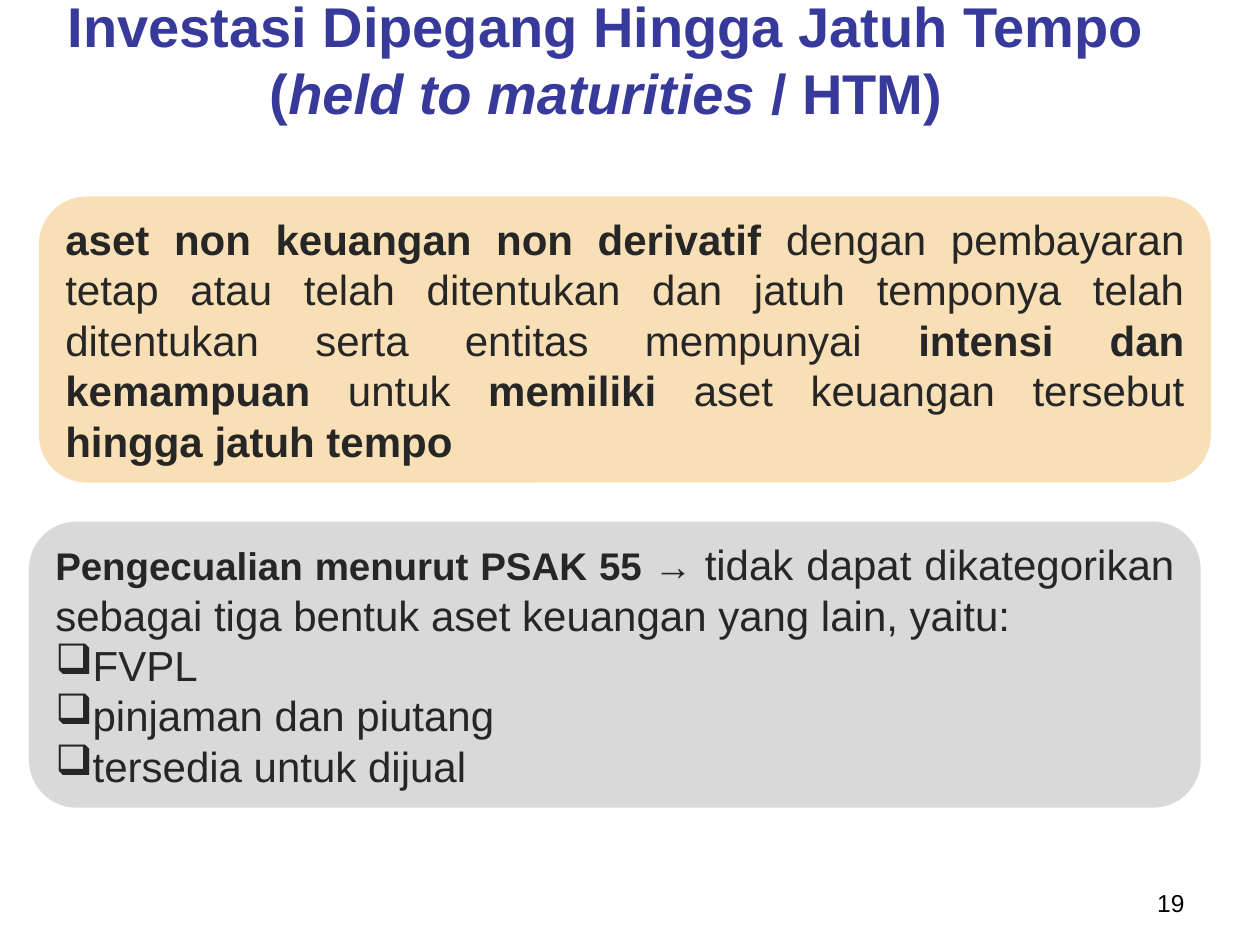
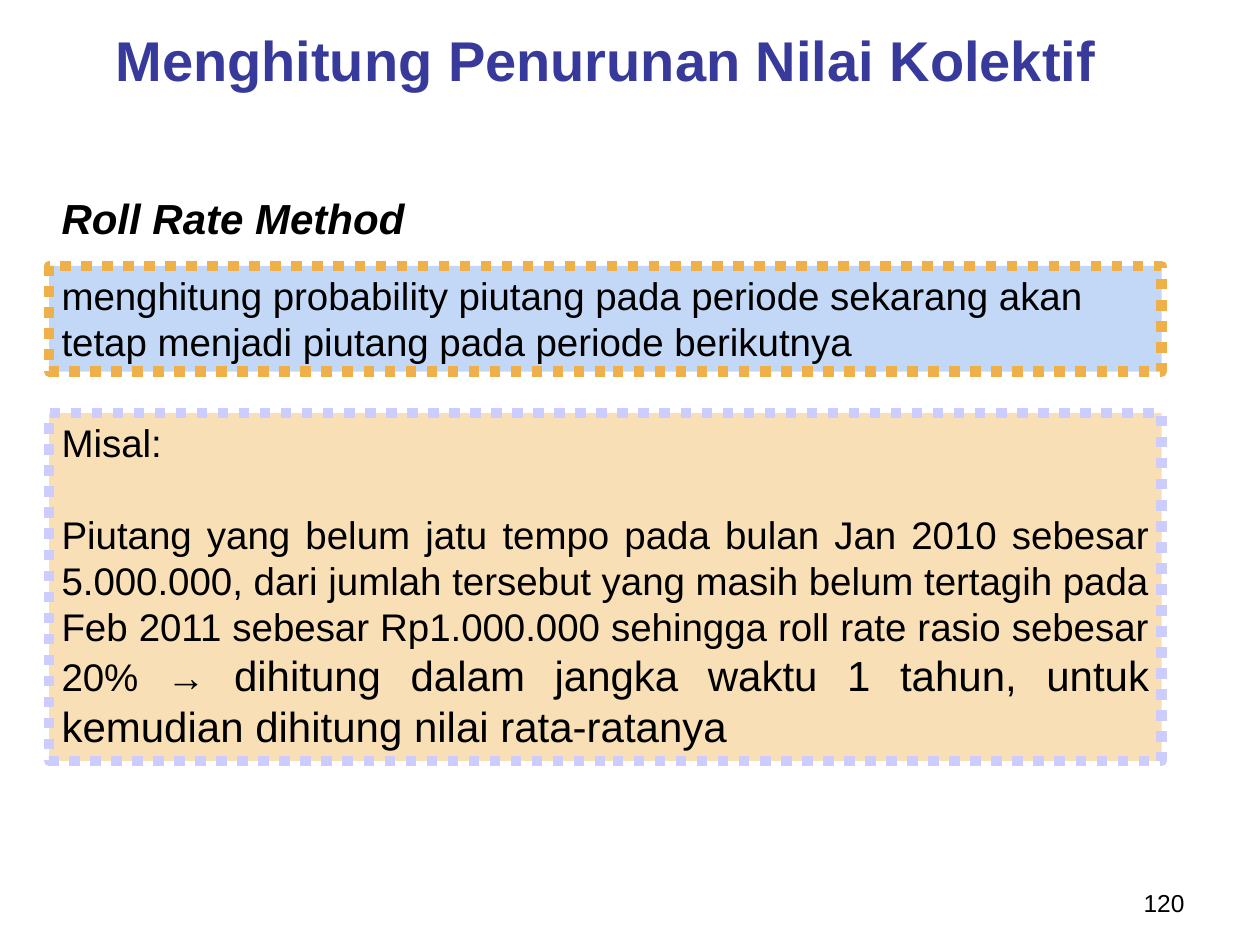
from lxml.etree import SubElement
from pptx import Presentation
from pptx.dml.color import RGBColor
from pptx.enum.dml import MSO_LINE
from pptx.enum.shapes import MSO_SHAPE
from pptx.enum.text import MSO_ANCHOR, MSO_AUTO_SIZE, PP_ALIGN
from pptx.oxml.ns import qn
from pptx.util import Inches, Pt

FONT = "Arial"
INDIGO, BLACK, CHARCOAL = "37399B", "000000", "262626"
SAND, GREY, SKY = "F9DFB6", "D9D9D9", "C3D8F6"
ORANGE, LAVENDER = "EFB049", "CCCCFF"


def color(hex_code):
    return RGBColor.from_string(hex_code)


def write(frame, paragraphs, hex_code, align, anchor=MSO_ANCHOR.TOP, fit=MSO_AUTO_SIZE.NONE):
    frame.word_wrap = True
    frame.auto_size = fit
    frame.vertical_anchor = anchor
    for index, runs in enumerate(paragraphs):
        paragraph = frame.add_paragraph() if index else frame.paragraphs[0]
        paragraph.alignment = align
        for text, size, style in runs:
            run = paragraph.add_run()
            run.text = text
            run.font.name = FONT
            run.font.size = Pt(size)
            run.font.bold = "b" in style
            run.font.italic = "i" in style
            run.font.color.rgb = color(hex_code)


prs = Presentation()
prs.slide_width, prs.slide_height = Inches(10), Inches(7.5)

headings = [
    (0.08, 0.77, "19", [("Investasi Dipegang Hingga Jatuh Tempo (", 32, "b"),
                        ("held to maturities", 32, "bi"), (" / HTM)", 32, "b")]),
    (0.16, 0.62, "120", [("Menghitung Penurunan Nilai Kolektif", 32, "b")]),
]
for top, height, number, runs in headings:
    slide = prs.slides.add_slide(prs.slide_layouts[5])
    title = slide.shapes.title
    title.left, title.top = Inches(0.31), Inches(top)
    title.width, title.height = Inches(9), Inches(height)
    write(title.text_frame, [runs], INDIGO, PP_ALIGN.CENTER, MSO_ANCHOR.MIDDLE)
    page_number = slide.shapes.add_textbox(Inches(7.17), Inches(7), Inches(2.33), Inches(0.35))
    write(page_number.text_frame, [[(number, 14, "")]], BLACK, PP_ALIGN.RIGHT)

held_to_maturity, roll_rate = prs.slides

definition = [[
    ("aset non keuangan non derivatif ", 24, "b"),
    ("dengan pembayaran tetap atau telah ditentukan dan jatuh temponya telah ditentukan "
     "serta entitas mempunyai ", 24, ""),
    ("intensi dan kemampuan ", 24, "b"),
    ("untuk ", 24, ""),
    ("memiliki", 24, "b"),
    (" aset keuangan tersebut ", 24, ""),
    ("hingga jatuh tempo", 24, "b"),
]]
exceptions = [[
    ("Pengecualian menurut PSAK 55 → ", 22, "b"),
    ("tidak dapat dikategorikan sebagai tiga bentuk aset keuangan yang lain, yaitu:", 24, ""),
]] + [[(kind, 24, "")] for kind in ("FVPL", "pinjaman dan piutang", "tersedia untuk dijual")]

for left, top, fill, paragraphs in [(0.31, 1.56, SAND, definition), (0.23, 4.14, GREY, exceptions)]:
    panel = held_to_maturity.shapes.add_shape(
        MSO_SHAPE.ROUNDED_RECTANGLE, Inches(left), Inches(top), Inches(9.3), Inches(2.27))
    panel.shadow.inherit = False
    panel.fill.solid()
    panel.fill.fore_color.rgb = color(fill)
    panel.line.fill.background()
    write(panel.text_frame, paragraphs, CHARCOAL, PP_ALIGN.JUSTIFY, MSO_ANCHOR.MIDDLE)
    for item in panel.text_frame.paragraphs[1:]:
        SubElement(item._p.get_or_add_pPr(), qn("a:buChar"), char="❑")

method = roll_rate.shapes.add_textbox(Inches(0.39), Inches(1.48), Inches(3.2), Inches(0.5))
write(method.text_frame, [[("Roll Rate Method", 24, "bi")]], BLACK, PP_ALIGN.LEFT,
      fit=MSO_AUTO_SIZE.SHAPE_TO_FIT_TEXT)

meaning = [[("menghitung probability piutang pada periode sekarang akan tetap menjadi piutang "
             "pada periode berikutnya", 22, "")]]
example = [
    [("Misal:", 22, "")],
    [("Piutang yang belum jatu tempo pada bulan Jan 2010 sebesar 5.000.000, dari jumlah "
      "tersebut yang masih belum tertagih pada Feb 2011 sebesar Rp1.000.000 sehingga roll "
      "rate rasio sebesar 20% → ", 22, ""),
     ("dihitung dalam jangka waktu 1 tahun, untuk kemudian dihitung nilai rata-ratanya", 24, "")],
]
for top, height, fill, border, align, paragraphs in [
    (2.11, 0.84, SKY, ORANGE, PP_ALIGN.LEFT, meaning),
    (3.28, 2.76, SAND, LAVENDER, PP_ALIGN.JUSTIFY, example),
]:
    box = roll_rate.shapes.add_shape(
        MSO_SHAPE.RECTANGLE, Inches(0.39), Inches(top), Inches(8.83), Inches(height))
    box.shadow.inherit = False
    box.fill.solid()
    box.fill.fore_color.rgb = color(fill)
    box.line.color.rgb = color(border)
    box.line.width = Pt(6)
    box.line.dash_style = MSO_LINE.ROUND_DOT
    write(box.text_frame, paragraphs, BLACK, align, fit=MSO_AUTO_SIZE.SHAPE_TO_FIT_TEXT)
    for following in box.text_frame.paragraphs[1:]:
        following.space_before = Pt(26)

prs.save("out.pptx")
